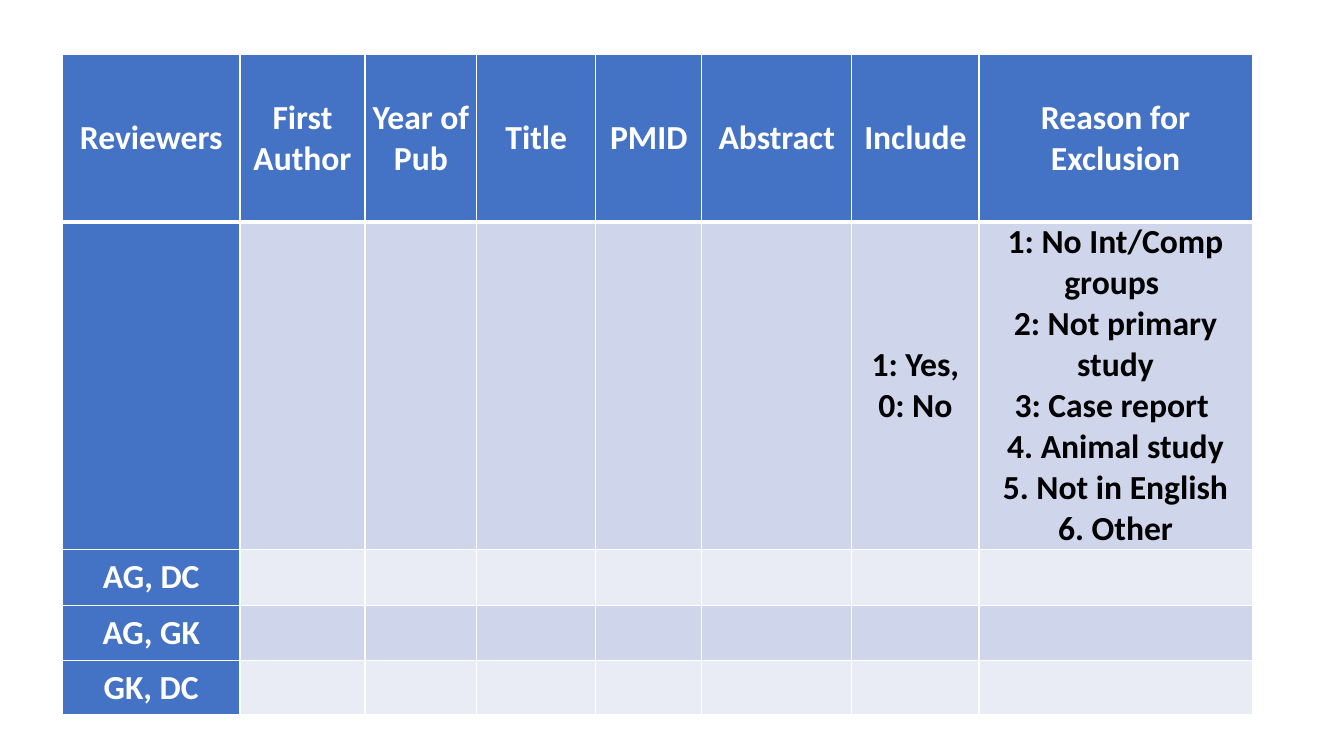
from dataclasses import dataclass

from lxml.etree import SubElement
from pptx import Presentation
from pptx.dml.color import RGBColor
from pptx.enum.text import MSO_ANCHOR, PP_ALIGN
from pptx.oxml.ns import qn
from pptx.util import Inches, Pt


@dataclass(frozen=True)
class Theme:
    font: str = "Calibri"
    size: int = 24
    header: str = "4472C4"
    bands: tuple[str, str] = ("CFD5EA", "E9EBF5")
    light: str = "FFFFFF"
    dark: str = "000000"
    thin: int = 1
    thick: int = 3


@dataclass(frozen=True)
class Column:
    heading: str
    width: float
    codes: tuple[str, ...] = ()


@dataclass(frozen=True)
class CellStyle:
    fill: str
    color: str
    top: int
    bottom: int


THEME = Theme()
COLUMNS = [
    Column("Reviewers", 1.76),
    Column("First Author", 1.24),
    Column("Year of Pub", 1.11),
    Column("Title", 1.18),
    Column("PMID", 1.05),
    Column("Abstract", 1.49),
    Column("Include", 1.26, ("1: Yes, 0: No",)),
    Column("Reason for Exclusion", 2.71, (
        "1: No Int/Comp groups ",
        "2: Not primary study",
        "3: Case report ",
        "4. Animal study",
        "5. Not in English",
        "6. Other",
    )),
]
REVIEWERS = ["AG, DC", "AG, GK", "GK, DC"]
ROW_HEIGHTS = [1.66, 3.25, 0.55, 0.55, 0.54]
LEFT, TOP = 0.62, 0.54


def cell_style(row: int, col: int) -> CellStyle:
    """Solid header row and first column, banded body, thick rule below the header."""
    is_header = row == 0 or col == 0
    return CellStyle(
        fill=THEME.header if is_header else THEME.bands[(row - 1) % 2],
        color=THEME.light if is_header else THEME.dark,
        top=THEME.thick if row == 1 else THEME.thin,
        bottom=THEME.thick if row == 0 else THEME.thin,
    )


def set_borders(cell, style: CellStyle) -> None:
    tc_pr = cell._tc.get_or_add_tcPr()
    widths = {"lnL": THEME.thin, "lnR": THEME.thin,
              "lnT": style.top, "lnB": style.bottom}
    for side, width in widths.items():
        ln = SubElement(tc_pr, qn(f"a:{side}"), w=str(Pt(width)))
        fill = SubElement(ln, qn("a:solidFill"))
        SubElement(fill, qn("a:srgbClr"), val=THEME.light)


def write_lines(cell, lines: tuple[str, ...], color: str) -> None:
    tf = cell.text_frame
    for i, line in enumerate(lines):
        p = tf.add_paragraph() if i else tf.paragraphs[0]
        p.alignment = PP_ALIGN.CENTER
        r = p.add_run()
        r.text = line
        r.font.name = THEME.font
        r.font.size = Pt(THEME.size)
        r.font.bold = True
        r.font.color.rgb = RGBColor.from_string(color)


def format_cell(cell, lines: tuple[str, ...], style: CellStyle) -> None:
    cell.vertical_anchor = MSO_ANCHOR.MIDDLE
    cell.margin_left = cell.margin_right = Inches(0.07)
    cell.margin_top = cell.margin_bottom = 0
    set_borders(cell, style)
    cell.fill.solid()
    cell.fill.fore_color.rgb = RGBColor.from_string(style.fill)
    write_lines(cell, lines, style.color)


def add_screening_table(s) -> None:
    rows = [[(c.heading,) for c in COLUMNS], [c.codes for c in COLUMNS]]
    rows += [[(pair,)] + [()] * (len(COLUMNS) - 1) for pair in REVIEWERS]
    width = sum(c.width for c in COLUMNS)
    table = s.shapes.add_table(
        len(rows), len(COLUMNS), Inches(LEFT), Inches(TOP),
        Inches(width), Inches(sum(ROW_HEIGHTS))).table
    table.first_col = True
    for column, item in zip(table.columns, COLUMNS):
        column.width = Inches(item.width)
    for row, height in zip(table.rows, ROW_HEIGHTS):
        row.height = Inches(height)
    for i, row_lines in enumerate(rows):
        for j, lines in enumerate(row_lines):
            format_cell(table.cell(i, j), lines, cell_style(i, j))


def main() -> None:
    prs = Presentation()
    prs.slide_width, prs.slide_height = Inches(13.33), Inches(7.5)
    s = prs.slides.add_slide(prs.slide_layouts[6])
    add_screening_table(s)
    prs.save("out.pptx")


if __name__ == "__main__":
    main()
